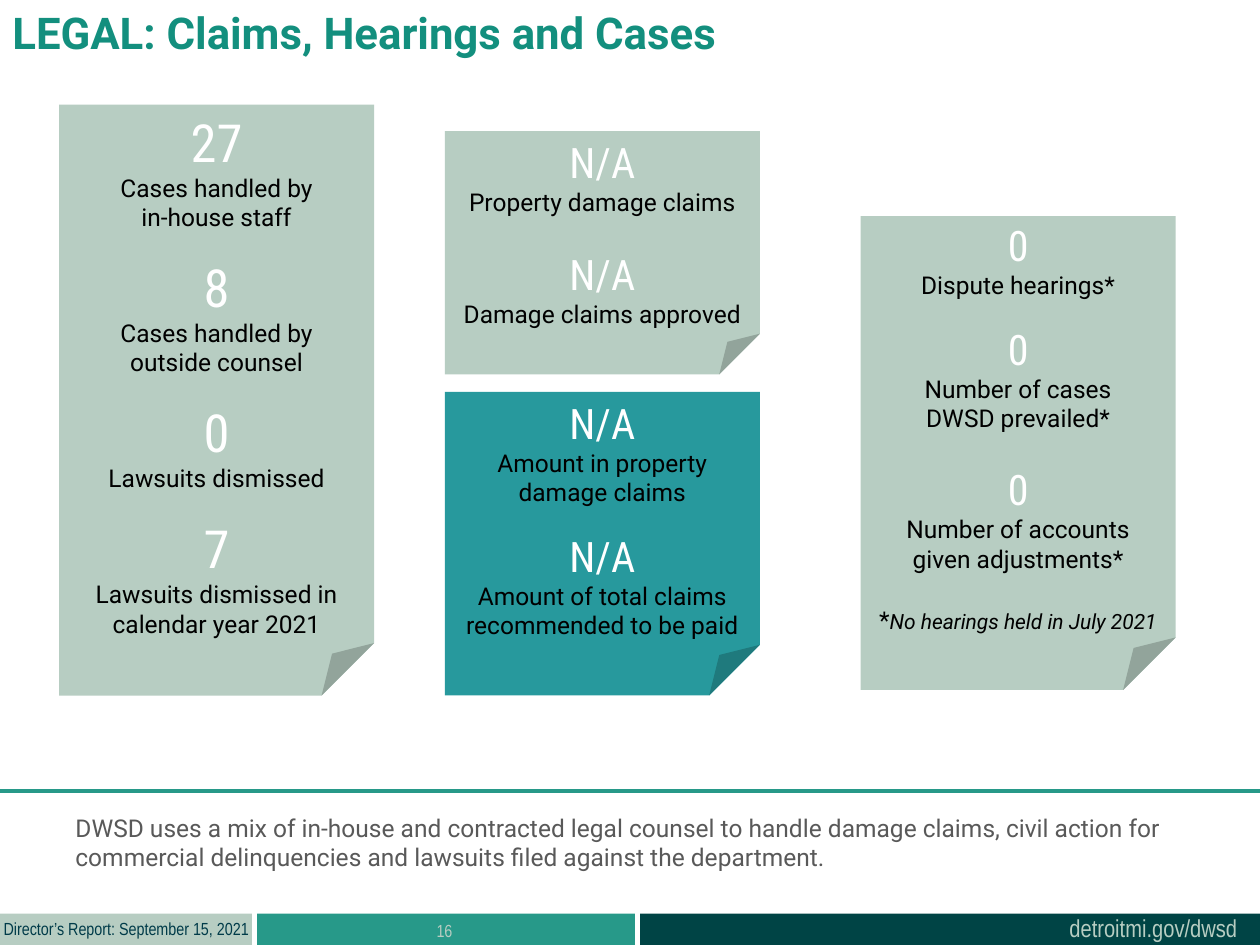
from dataclasses import dataclass

from lxml.etree import SubElement
from pptx import Presentation
from pptx.dml.color import RGBColor
from pptx.enum.shapes import MSO_CONNECTOR, MSO_SHAPE
from pptx.enum.text import MSO_ANCHOR, PP_ALIGN
from pptx.oxml.ns import qn
from pptx.util import Pt


@dataclass(frozen=True)
class Theme:
    """Colours, fonts and type sizes of the slide."""
    green: str = "279989"
    title_green: str = "138F7E"
    teal: str = "27999D"
    dark: str = "004445"
    navy: str = "003B49"
    sage: str = "B7CDC2"
    gray: str = "595959"
    white: str = "FFFFFF"
    black: str = "000000"
    body_font: str = "Roboto"
    figure_font: str = "Roboto Condensed"
    footer_font: str = "Arial Narrow"
    title_size: int = 25
    large_figure: int = 30
    figure: int = 24
    body: int = 14
    note: int = 12
    small: int = 10


THEME = Theme()
NOTE_WIDTH = 180
SMALL_GAP, LARGE_GAP = 13.5, 18


def style(para, font_name, size, color, bold=False, align=PP_ALIGN.LEFT):
    """Set the font and alignment of a paragraph."""
    para.alignment = align
    para.font.name = font_name
    para.font.size = Pt(size)
    para.font.bold = bold
    para.font.color.rgb = RGBColor.from_string(color)


def add_block(slide, preset, left, top, width, height, color):
    """Add a filled shape without outline or shadow."""
    block = slide.shapes.add_shape(preset, Pt(left), Pt(top), Pt(width), Pt(height))
    block.shadow.inherit = False
    block.fill.solid()
    block.fill.fore_color.rgb = RGBColor.from_string(color)
    block.line.fill.background()
    return block


def add_label(slide, text, left, top, width, height, font_name, size, color, wrap=True, **options):
    """Add a text box that holds one paragraph."""
    box = slide.shapes.add_textbox(Pt(left), Pt(top), Pt(width), Pt(height))
    box.text_frame.word_wrap = wrap
    para = box.text_frame.paragraphs[0]
    para.text = text
    style(para, font_name, size, color, **options)


def add_note(slide, left, top, height, color, figure_size, entries, footnote=None):
    """Add a folded note with (gap, figure, caption) entries."""
    note = add_block(slide, MSO_SHAPE.FOLDED_CORNER, left, top, NOTE_WIDTH, height, color)
    frame = note.text_frame
    frame.word_wrap = True
    frame.vertical_anchor = MSO_ANCHOR.MIDDLE
    for index, (gap, figure, caption) in enumerate(entries):
        para = frame.add_paragraph() if index else frame.paragraphs[0]
        para.text = figure
        style(para, THEME.figure_font, figure_size, THEME.white, align=PP_ALIGN.CENTER)
        if gap:
            para.space_before = Pt(gap)
        para = frame.add_paragraph()
        para.text = caption
        style(para, THEME.body_font, THEME.body, THEME.black, align=PP_ALIGN.CENTER)
    if footnote:
        para = frame.add_paragraph()
        para.text = "*"
        style(para, THEME.body_font, THEME.body, THEME.black, align=PP_ALIGN.CENTER)
        para.space_before = Pt(LARGE_GAP)
        span = para.add_run()
        span.text = footnote
        span.font.size = Pt(THEME.note)
        span.font.italic = True


def add_rule(slide, left, right, top, color, weight):
    """Add a horizontal line."""
    rule = slide.shapes.add_connector(
        MSO_CONNECTOR.STRAIGHT, Pt(left), Pt(top), Pt(right), Pt(top))
    rule.line.color.rgb = RGBColor.from_string(color)
    rule.line.width = Pt(weight)
    SubElement(rule._element.spPr, qn("a:effectLst"))


def add_footer(slide):
    """Add the three footer bars and their labels."""
    for left, width, color in (
        (146.88, 216, THEME.green),
        (365.76, 354.24, THEME.dark),
        (0, 144, THEME.sage),
    ):
        add_block(slide, MSO_SHAPE.RECTANGLE, left, 522, width, 18, color)
    font_name = THEME.footer_font
    add_label(slide, "detroitmi.gov/dwsd", 604, 518.4, 111.6, 24.5,
              font_name, THEME.body, THEME.sage, wrap=False)
    add_label(slide, "Director’s Report: September 15, 2021", -5, 521.3, 155.5, 19.4,
              font_name, THEME.small, THEME.navy, wrap=False)
    add_label(slide, "16", 146, 522, 216, 28.8,
              font_name, THEME.small, THEME.sage, align=PP_ALIGN.CENTER)


def add_notes(slide):
    """Add the four notes with the legal figures."""
    add_note(slide, 254.2, 74.9, 139, THEME.sage, THEME.figure, (
        (0, "N/A", "Property damage claims"),
        (LARGE_GAP, "N/A", "Damage claims approved"),
    ))
    add_note(slide, 254.2, 223.9, 173.5, THEME.teal, THEME.figure, (
        (0, "N/A", "Amount in property\ndamage claims"),
        (SMALL_GAP, "N/A", "Amount of total claims recommended to be paid"),
    ))
    add_note(slide, 491.8, 123.6, 270.7, THEME.sage, THEME.figure, (
        (0, "0", "Dispute hearings*"),
        (SMALL_GAP, "0", "Number of cases\nDWSD prevailed*"),
        (LARGE_GAP, "0", "Number of accounts\ngiven adjustments*"),
    ), "No hearings held in July 2021")
    add_note(slide, 33.8, 59.8, 337.7, THEME.sage, THEME.large_figure, (
        (0, "27", "Cases handled by\nin-house staff"),
        (SMALL_GAP, "8", "Cases handled by\noutside counsel"),
        (SMALL_GAP, "0", "Lawsuits dismissed"),
        (SMALL_GAP, "7", "Lawsuits dismissed in calendar year 2021"),
    ))


def main():
    """Build the slide and save the deck."""
    deck = Presentation()
    deck.slide_width, deck.slide_height = Pt(720), Pt(540)
    slide = deck.slides.add_slide(deck.slide_layouts[6])
    add_footer(slide)
    add_label(slide, "LEGAL: Claims, Hearings and Cases", 0, 0, 546.5, 55.4,
              THEME.body_font, THEME.title_size, THEME.title_green, bold=True)
    add_notes(slide)
    add_label(slide, "DWSD uses a mix of in-house and contracted legal counsel to handle damage "
              "claims, civil action for commercial delinquencies and lawsuits filed against "
              "the department.", 36, 460.8, 649.4, 41, THEME.body_font, THEME.body, THEME.gray)
    add_rule(slide, 728.6, 0, 452.2, THEME.green, 2.25)
    deck.save("out.pptx")


if __name__ == "__main__":
    main()
